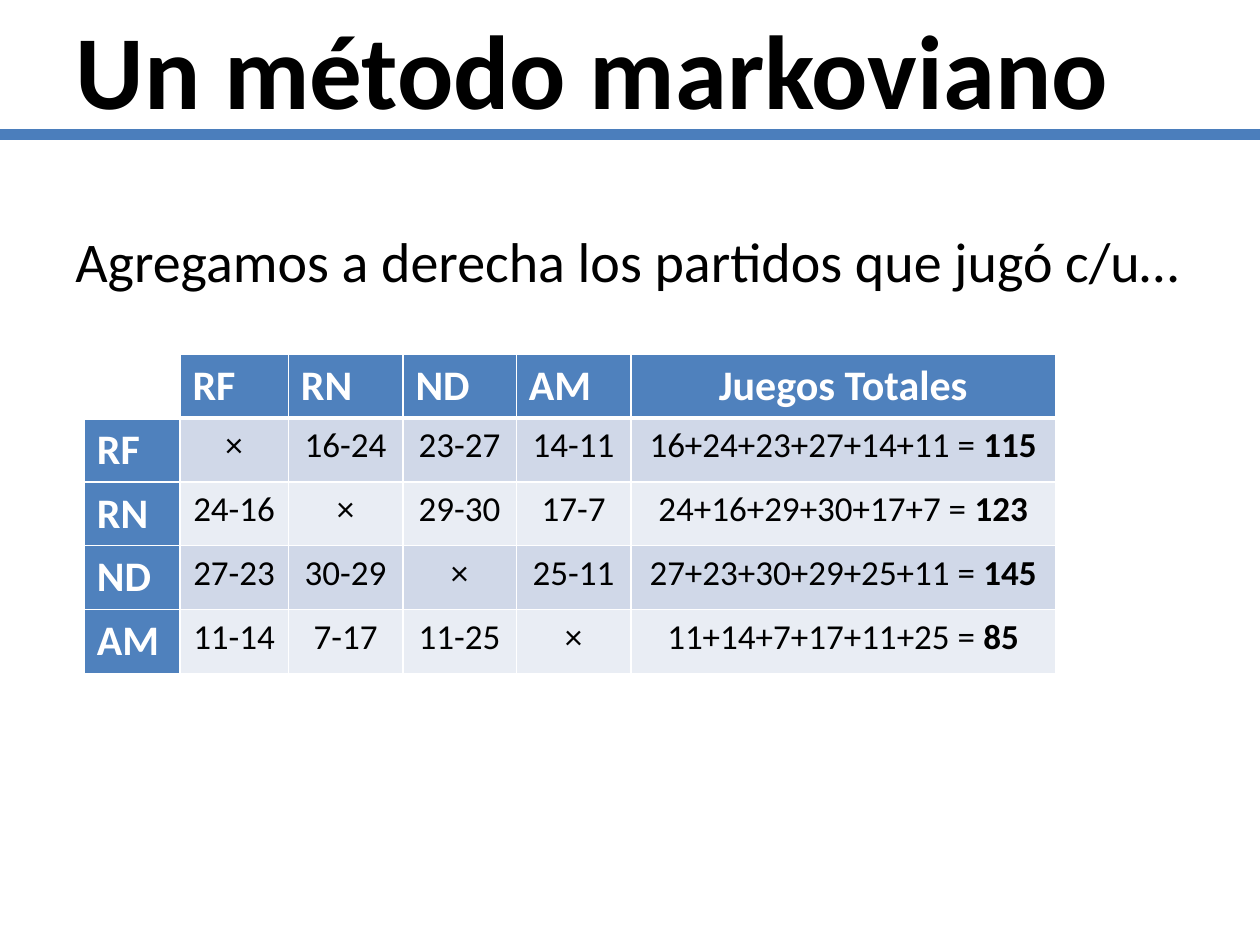
from pptx import Presentation
from pptx.dml.color import RGBColor
from pptx.enum.shapes import MSO_CONNECTOR
from pptx.enum.text import MSO_ANCHOR, MSO_AUTO_SIZE, PP_ALIGN
from pptx.oxml.ns import qn
from pptx.util import Pt
from lxml import etree

LEFT, CENTER = PP_ALIGN.LEFT, PP_ALIGN.CENTER
TOP, MIDDLE = MSO_ANCHOR.TOP, MSO_ANCHOR.MIDDLE
NO_AUTOFIT = MSO_AUTO_SIZE.NONE
STRAIGHT = MSO_CONNECTOR.STRAIGHT

COLORS = {
    "text": "000000",
    "white": "FFFFFF",
    "rule": "4B7EBC",
    "header": "4F81BD",
    "odd": "D0D8E8",
    "even": "E9EDF4",
}
TITLE_FONT = {"name": "Calibri", "size": Pt(60), "bold": True}
INTRO_FONT = {"name": "Calibri", "size": Pt(32), "bold": False}
HEADER_FONT = {"name": "Calibri", "size": Pt(24), "bold": True}
SCORE_FONT = {"name": "Calibri", "size": Pt(20), "bold": False}
TOTAL_FONT = {**SCORE_FONT, "bold": True}

SLIDE_WIDTH, SLIDE_HEIGHT = 720, 540
TITLE_HEIGHT = 77
MARGIN = 36
COLUMN_WIDTHS = [54.7, 61.9, 65.5, 64.8, 65.5, 242.6]
ROW_HEIGHT = 36

TEAMS = ["RF", "RN", "ND", "AM"]
SCORES = [
    ["×", "16-24", "23-27", "14-11"],
    ["24-16", "×", "29-30", "17-7"],
    ["27-23", "30-29", "×", "25-11"],
    ["11-14", "7-17", "11-25", "×"],
]


def rgb(color):
    return RGBColor.from_string(COLORS[color])


def add_run(paragraph, text, font_format, color="text"):
    run = paragraph.add_run()
    run.text = text
    for attribute, value in font_format.items():
        setattr(run.font, attribute, value)
    run.font.color.rgb = rgb(color)


def write_text(shape, text, font_format, anchor):
    frame = shape.text_frame
    frame.word_wrap = True
    frame.auto_size = NO_AUTOFIT
    frame.vertical_anchor = anchor
    paragraph = frame.paragraphs[0]
    paragraph.alignment = LEFT
    add_run(paragraph, text, font_format)


def add_title(slide, text):
    title = slide.shapes.title
    title.left, title.top = Pt(MARGIN), Pt(0)
    title.width, title.height = Pt(SLIDE_WIDTH - 2 * MARGIN), Pt(TITLE_HEIGHT)
    write_text(title, text, TITLE_FONT, MIDDLE)


def add_title_rule(slide):
    rule = slide.shapes.add_connector(
        STRAIGHT, Pt(0), Pt(TITLE_HEIGHT), Pt(SLIDE_WIDTH), Pt(TITLE_HEIGHT))
    rule.line.color.rgb = rgb("rule")
    rule.line.width = Pt(6)
    etree.SubElement(rule.line._get_or_add_ln().getparent(), qn("a:effectLst"))


def add_intro(slide, text):
    intro = slide.shapes.add_textbox(
        Pt(MARGIN), Pt(126), Pt(SLIDE_WIDTH - 2 * MARGIN), Pt(356))
    write_text(intro, text, INTRO_FONT, TOP)


def set_borders(cell, bottom_width):
    """Draw white borders; they must precede the cell's fill in the XML."""
    properties = cell._tc.get_or_add_tcPr()
    widths = {"a:lnL": 1, "a:lnR": 1, "a:lnT": 1, "a:lnB": bottom_width}
    for index, (side, width) in enumerate(widths.items()):
        border = etree.Element(qn(side), w=str(Pt(width)))
        fill = etree.SubElement(border, qn("a:solidFill"))
        etree.SubElement(fill, qn("a:srgbClr"), val=COLORS["white"])
        properties.insert(index, border)


def fill_cell(cell, fill, alignment, runs, bottom_width=1):
    """Write runs of (text, font format, color) on the given fill."""
    if fill:
        cell.fill.solid()
        cell.fill.fore_color.rgb = rgb(fill)
    else:
        cell.fill.background()
    set_borders(cell, bottom_width)
    paragraph = cell.text_frame.paragraphs[0]
    paragraph.alignment = alignment
    for run in runs:
        add_run(paragraph, *run)


def total_runs(scores):
    games = [n for score in scores if score != "×" for n in score.split("-")]
    total = sum(int(n) for n in games)
    return [("+".join(games) + " = ", SCORE_FONT), (str(total), TOTAL_FONT)]


def add_score_table(slide):
    row_count, column_count = len(TEAMS) + 1, len(COLUMN_WIDTHS)
    table = slide.shapes.add_table(
        row_count, column_count, Pt(48.2), Pt(202.3),
        Pt(sum(COLUMN_WIDTHS)), Pt(row_count * ROW_HEIGHT)).table
    for column, width in zip(table.columns, COLUMN_WIDTHS):
        column.width = Pt(width)
    for row in table.rows:
        row.height = Pt(ROW_HEIGHT)

    fill_cell(table.cell(0, 0), None, LEFT, [], bottom_width=3)
    for column, heading in enumerate(TEAMS + ["Juegos Totales"], start=1):
        alignment = LEFT if heading in TEAMS else CENTER
        fill_cell(table.cell(0, column), "header", alignment,
                  [(heading, HEADER_FONT, "white")], bottom_width=3)

    for row, (team, scores) in enumerate(zip(TEAMS, SCORES), start=1):
        band = "odd" if row % 2 else "even"
        fill_cell(table.cell(row, 0), "header", LEFT,
                  [(team, HEADER_FONT, "white")])
        for column, score in enumerate(scores, start=1):
            fill_cell(table.cell(row, column), band, CENTER,
                      [(score, SCORE_FONT)])
        fill_cell(table.cell(row, column_count - 1), band, CENTER,
                  total_runs(scores))


def main():
    presentation = Presentation()
    presentation.slide_width = Pt(SLIDE_WIDTH)
    presentation.slide_height = Pt(SLIDE_HEIGHT)
    title_only = presentation.slide_layouts[5]
    slide = presentation.slides.add_slide(title_only)
    add_title_rule(slide)
    add_intro(slide, "Agregamos a derecha los partidos que jugó c/u…")
    add_score_table(slide)
    add_title(slide, "Un método markoviano")
    presentation.save("out.pptx")


if __name__ == "__main__":
    main()
